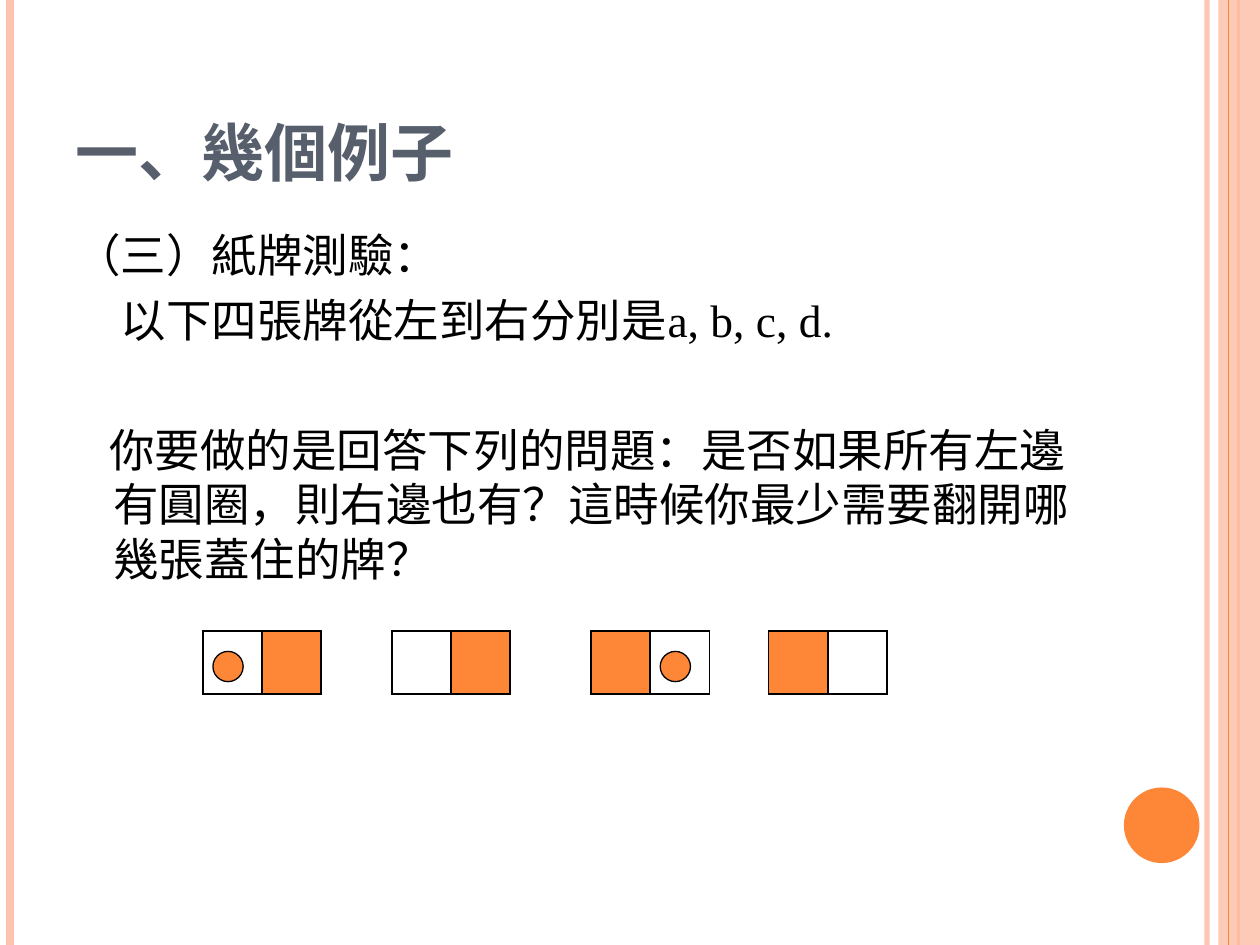
import pptx
import pptx.util
import pptx.dml.color
import pptx.enum.shapes
import pptx.enum.text
import pptx.oxml
import pptx.oxml.ns
from pptx.util import Inches, Pt

ORANGE, PINK, BLACK, SLATE = "FE8637", "FEC3AE", "000000", "575F6D"
SHAPE = pptx.enum.shapes.MSO_SHAPE

# Content
TITLE = "一、幾個例子"
BODY = [  # text, first-line indent in inches, space before in points
    ("（三）紙牌測驗：", -0.3, 6),
    ("以下四張牌從左到右分別是a, b, c, d.", 0.06, 6),
    ("你要做的是回答下列的問題：是否如果所有左邊有圓圈，則右邊也有？"
     "這時候你最少需要翻開哪幾張蓋住的牌？", -0.03, 43),
]
CARDS = [  # left, covered half (0 left, 1 right), circle left or None
    (1.61, 1, 1.69),
    (3.11, 1, None),
    (4.69, 0, 5.24),
    (6.1, 0, None),
]
CARD_TOP, HALF_W, CARD_H = 5.01, 0.47, 0.5
STRIPES_BEHIND = [(9.58, PINK, 3, 93), (0.08, PINK, 4.5, 100), (9.83, ORANGE, 1.5, 100)]
STRIPE_FRONT = (9.75, ORANGE, 0.75, 100)


def rgb(value):
    return pptx.dml.color.RGBColor.from_string(value)


def set_alpha(element, percent):
    for clr in element.iter(pptx.oxml.ns.qn("a:srgbClr")):
        pptx.oxml.ns.qn("a:alpha")
        alpha = clr.makeelement(pptx.oxml.ns.qn("a:alpha"), {"val": str(percent * 1000)})
        clr.append(alpha)


def add_stripe(s, x, color, width, alpha):
    line = s.shapes.add_connector(pptx.enum.shapes.MSO_CONNECTOR.STRAIGHT,
                                  Inches(x), 0, Inches(x), Inches(7.5))
    line.line.color.rgb = rgb(color)
    line.line.width = Pt(width)
    pr = line._element.spPr
    if alpha < 100:
        set_alpha(pr, alpha)
    pr.append(pr.makeelement(pptx.oxml.ns.qn("a:effectLst"), {}))


def add_filled(s, kind, x, y, w, h, color, outline=None):
    sp = s.shapes.add_shape(kind, Inches(x), Inches(y), Inches(w), Inches(h))
    sp.shadow.inherit = False
    sp.fill.solid()
    sp.fill.fore_color.rgb = rgb(color)
    if outline:
        sp.line.color.rgb = rgb(outline)
        sp.line.width = Pt(0.75)
    else:
        sp.line.fill.background()
    return sp


def add_run(p, text, font, size, color, bold=False):
    r = p.add_run()
    r.text = text
    r.font.name, r.font.size, r.font.bold = font, Pt(size), bold
    r.font.color.rgb = rgb(color)


def add_borders(cell):
    pr = cell._tc.get_or_add_tcPr()
    for i, side in enumerate(("lnL", "lnR", "lnT", "lnB")):
        pr.insert(i, pptx.oxml.parse_xml(
            f'<a:{side} {pptx.oxml.ns.nsdecls("a")} w="12700"><a:solidFill>'
            f'<a:srgbClr val="{BLACK}"/></a:solidFill></a:{side}>'))


def add_card(s, x, covered):
    table = s.shapes.add_table(1, 2, Inches(x), Inches(CARD_TOP),
                               Inches(2 * HALF_W), Inches(CARD_H)).table
    table.first_row = table.horz_banding = False
    for i in range(2):
        table.columns[i].width = Inches(HALF_W)
        cell = table.cell(0, i)
        if i == covered:
            cell.fill.solid()
            cell.fill.fore_color.rgb = rgb(ORANGE)
        else:
            cell.fill.background()
        add_borders(cell)


def main():
    prs = pptx.Presentation()
    prs.slide_width, prs.slide_height = Inches(10), Inches(7.5)
    s = prs.slides.add_slide(prs.slide_layouts[5])

    # Side decoration
    for stripe in STRIPES_BEHIND:
        add_stripe(s, *stripe)
    band = add_filled(s, SHAPE.RECTANGLE, 9.67, 0, 0.33, 7.5, PINK)
    set_alpha(band._element.spPr, 87)
    add_stripe(s, *STRIPE_FRONT)
    add_filled(s, SHAPE.OVAL, 8.92, 6.25, 0.6, 0.6, ORANGE)

    # Title
    title = s.shapes.title
    title.left, title.top = Inches(0.5), Inches(0.3)
    title.width, title.height = Inches(8.17), Inches(1.25)
    tf = title.text_frame
    tf.vertical_anchor = pptx.enum.text.MSO_ANCHOR.BOTTOM
    p = tf.paragraphs[0]
    p.alignment = pptx.enum.text.PP_ALIGN.LEFT
    add_run(p, TITLE, "TeX Gyre Schola", 36, SLATE, True)

    # Question text
    tf = s.shapes.add_textbox(Inches(0.5), Inches(1.75), Inches(8.17), Inches(5.33)).text_frame
    tf.word_wrap = True
    for i, (text, indent, before) in enumerate(BODY):
        p = tf.add_paragraph() if i else tf.paragraphs[0]
        p.space_before = Pt(before)
        pr = p._p.get_or_add_pPr()
        pr.set("marL", str(Inches(0.3)))
        pr.set("indent", str(Inches(indent)))
        add_run(p, text, "Times New Roman", 26, BLACK)

    # Cards, then the circles on their open halves
    for x, covered, _ in CARDS:
        add_card(s, x, covered)
    for _, _, circle in CARDS:
        if circle is not None:
            add_filled(s, SHAPE.OVAL, circle, 5.17, 0.24, 0.24, ORANGE, BLACK)

    prs.save("out.pptx")


if __name__ == "__main__":
    main()
